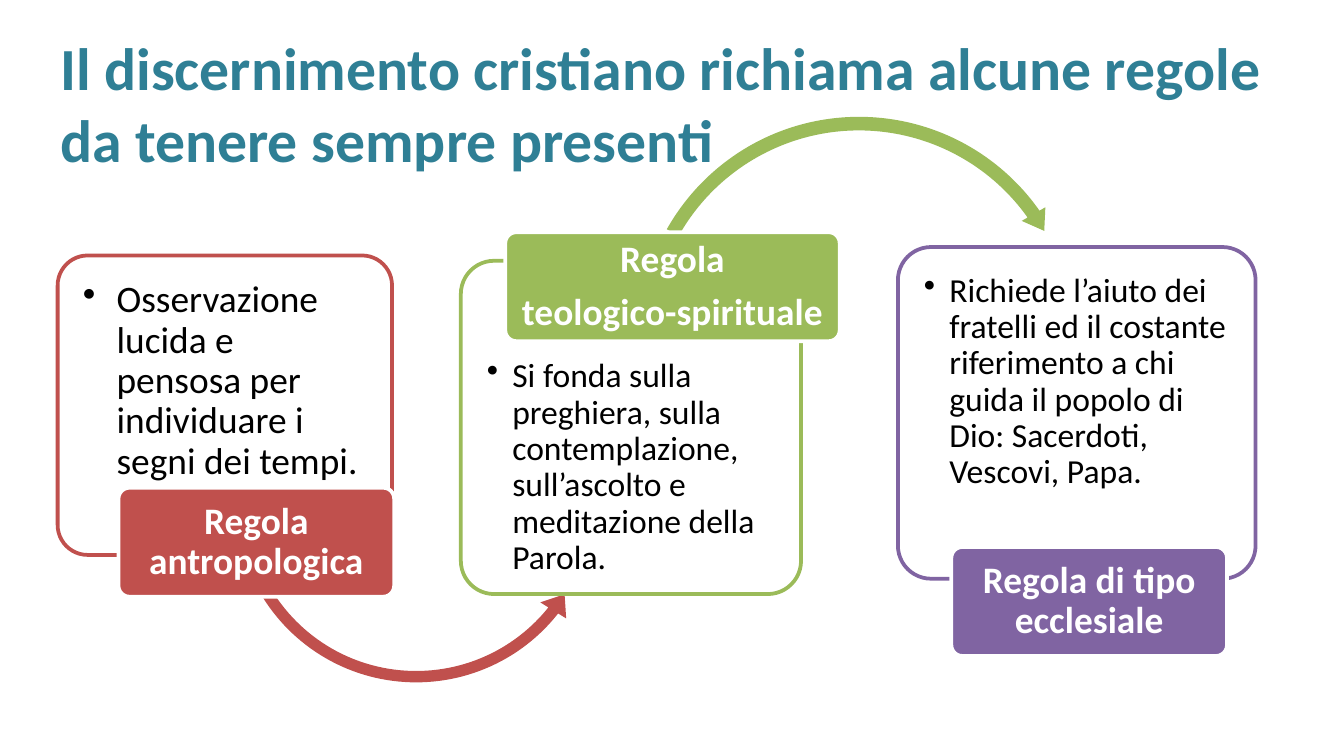
from dataclasses import dataclass

from lxml.etree import SubElement
from pptx import Presentation
from pptx.dml.color import RGBColor as RGB
from pptx.enum.shapes import MSO_SHAPE as Shape
from pptx.enum.text import MSO_ANCHOR as Anchor, PP_ALIGN as Align
from pptx.oxml.ns import qn
from pptx.util import Cm, Pt


@dataclass(frozen=True)
class Theme:
    font: str = "Calibri"
    teal: str = "2F7F95"
    red: str = "C0504D"
    green: str = "9BBB59"
    violet: str = "8064A2"
    white: str = "FFFFFF"
    black: str = "000000"
    title: int = 32
    large: int = 20
    small: int = 18
    line: int = 2
    round: float = 0.1


class Board:
    def __init__(self, slide, theme):
        self.slide = slide
        self.theme = theme

    def words(self, frame, text, size, color, bold=False, align=Align.LEFT,
              space=1.0, after=0):
        """Set the text of a frame and format its runs."""
        frame.word_wrap = True
        frame.text = text
        for para in frame.paragraphs:
            para.alignment = align
            para.line_spacing = space
            para.space_after = Pt(after)
            for run in para.runs:
                font = run.font
                font.name, font.size, font.bold = self.theme.font, Pt(size), bold
                font.color.rgb = RGB.from_string(color)

    def pad(self, frame, side, top, base):
        frame.margin_left = frame.margin_right = Cm(side)
        frame.margin_top, frame.margin_bottom = Cm(top), Cm(base)

    def shape(self, kind, box, fill, line=None):
        item = self.slide.shapes.add_shape(kind, *map(Cm, box))
        item.shadow.inherit = False
        item.fill.solid()
        item.fill.fore_color.rgb = RGB.from_string(fill)
        if line:
            item.line.color.rgb = RGB.from_string(line)
            item.line.width = Pt(self.theme.line)
        else:
            item.line.fill.background()
        return item

    def title(self, box, text):
        frame = self.slide.shapes.add_textbox(*map(Cm, box)).text_frame
        frame.vertical_anchor = Anchor.MIDDLE
        self.words(frame, text, self.theme.title, self.theme.teal, bold=True)

    def card(self, box, text, color, size, indent, top):
        """Outlined, slightly transparent card with one bullet."""
        item = self.shape(Shape.ROUNDED_RECTANGLE, box, self.theme.white, color)
        item.adjustments[0] = self.theme.round
        fill = item.element.spPr.find(qn("a:solidFill"))
        SubElement(fill[0], qn("a:alpha"), val="90000")
        frame = item.text_frame
        frame.vertical_anchor = Anchor.TOP
        self.pad(frame, 0.31, top, 0.31)
        self.words(frame, text, size, self.theme.black, space=0.9)
        props = frame.paragraphs[0]._p.get_or_add_pPr()
        props.set("marL", str(Cm(indent)))
        props.set("indent", str(-Cm(indent)))
        SubElement(props, qn("a:buChar"), char="•")

    def label(self, box, text, color):
        item = self.shape(Shape.ROUNDED_RECTANGLE, box, color, self.theme.white)
        item.adjustments[0] = self.theme.round
        frame = item.text_frame
        frame.vertical_anchor = Anchor.MIDDLE
        self.pad(frame, 0.1, 0.08, 0.08)
        self.words(frame, text, self.theme.large, self.theme.white, bold=True,
                   align=Align.CENTER, space=0.9, after=7)

    def arrow(self, kind, left, top, size, color, bends):
        item = self.shape(kind, (left, top, size, size), color)
        for i, bend in enumerate(bends):
            item.adjustments[i] = bend


def main():
    deck = Presentation()
    deck.slide_width, deck.slide_height = Cm(25.4), Cm(14.29)
    look = Theme()
    board = Board(deck.slides.add_slide(deck.slide_layouts[6]), look)

    board.title((0.89, 0.74, 23.39, 2.39),
                "Il discernimento cristiano richiama alcune regole "
                "da tenere sempre presenti")

    # color, card box, text, size, indent, top margin, arrow, label box, label
    rules = [
        (look.red, (1.09, 4.83, 6.32, 5.66),
         "Osservazione lucida e pensosa per individuare i segni dei tempi.",
         look.large, 0.64, 0.31,
         (Shape.LEFT_CIRCULAR_ARROW, 4.27, 5.89, 7.19,
          (0.03, 3.88, 23.04, 91.66, 0.04)),
         (2.24, 9.22, 5.21, 2.06), "Regola antropologica"),
        (look.green, (8.71, 4.93, 6.43, 6.3),
         "Si fonda sulla preghiera, sulla contemplazione, sull’ascolto e "
         "meditazione della Parola.",
         look.small, 0.48, 1.67,
         (Shape.CIRCULAR_ARROW, 11.94, 2.08, 8.59,
          (0.03, 3.21, 194.88, 125.6, 0.03)),
         (9.55, 4.39, 6.32, 2.06), "Regola\nteologico-spirituale"),
        (look.violet, (16.97, 4.67, 6.76, 6.27),
         "Richiede l’aiuto dei fratelli ed il costante riferimento a chi "
         "guida il popolo di Dio: Sacerdoti, Vescovi, Papa.",
         look.small, 0.48, 0.31, None,
         (17.98, 10.34, 5.21, 2.06), "Regola di tipo ecclesiale"),
    ]
    for color, box, text, size, indent, top, arc, tag, name in rules:
        board.card(box, text, color, size, indent, top)
        if arc:
            kind, left, high, span, bends = arc
            board.arrow(kind, left, high, span, color, bends)
        board.label(tag, name, color)

    deck.save("out.pptx")


if __name__ == "__main__":
    main()
